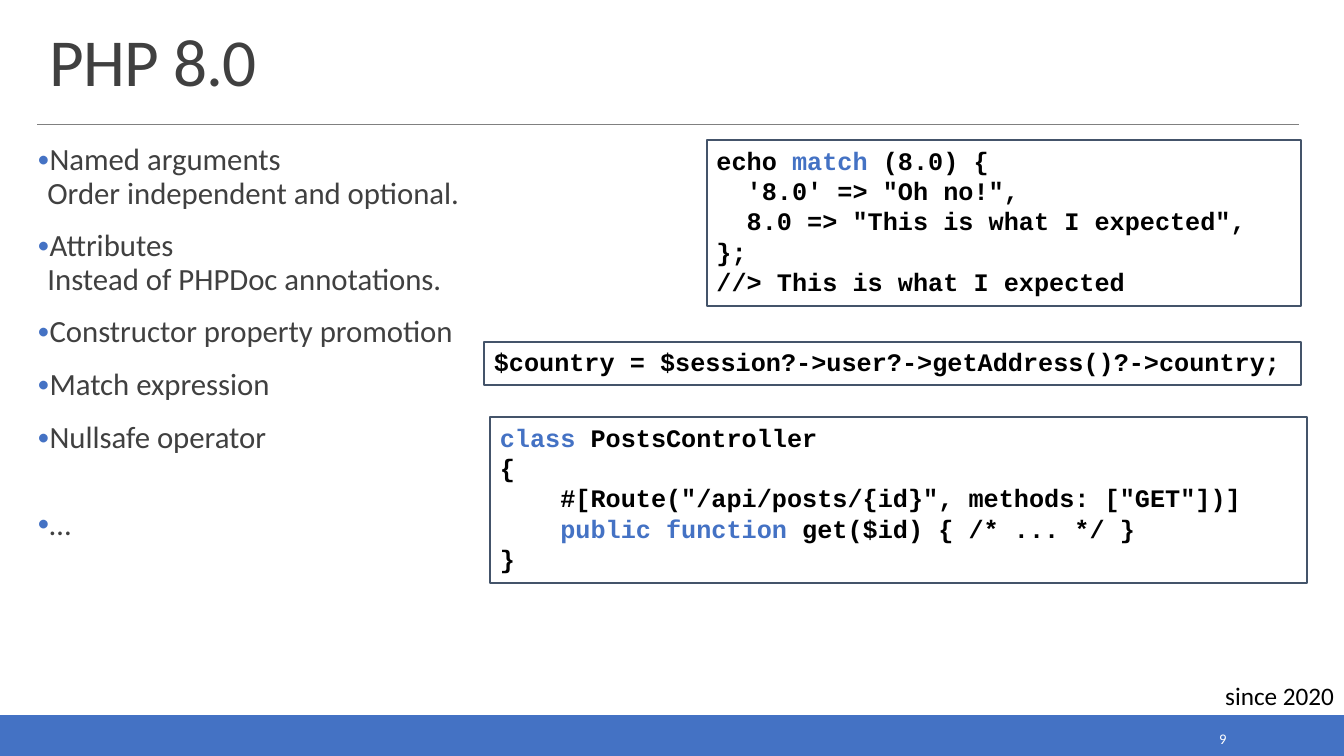
from collections import namedtuple
from dataclasses import dataclass

from pptx import Presentation
from pptx.dml.color import RGBColor
from pptx.enum.shapes import MSO_CONNECTOR, MSO_SHAPE
from pptx.enum.text import MSO_ANCHOR, MSO_AUTO_SIZE, PP_ALIGN
from pptx.oxml.ns import qn
from pptx.util import Emu, Inches, Pt

SLIDE_WIDTH, SLIDE_HEIGHT = Inches(13.333), Inches(7.5)
COLUMNS, ROWS = 40, 30
Box = namedtuple("Box", "left top width height")


@dataclass(frozen=True)
class Theme:
    """Colours, fonts and type sizes of the slide."""
    accent: str = "4472C4"
    heading: str = "404040"
    rule: str = "808080"
    frame: str = "44546A"
    ink: str = "000000"
    paper: str = "FFFFFF"
    prose: str = "Calibri"
    mono: str = "Courier New"
    title_size: float = 48
    list_size: float = 22
    code_size: float = 18
    number_size: float = 10.5


THEME = Theme()
FEATURES = [
    ("Named arguments", "Order independent and optional."),
    ("Attributes ", "Instead of PHPDoc annotations."),
    ("Constructor property promotion",),
    ("Match expression",),
    ("Nullsafe operator",),
    ("…",),
]
MATCH_CODE = [
    (0, [("echo ", False), ("match", True), (" (8.0) {", False)]),
    (2, [("'8.0' => \"Oh no!\",", False)]),
    (2, [('8.0 => "This is what I expected",', False)]),
    (0, [("};", False)]),
    (0, [("//> This is what I expected", False)]),
]
NULLSAFE_CODE = [
    (0, [("$country = $session?->user?->getAddress()?->country;", False)]),
]
CLASS_CODE = [
    (0, [("class ", True), ("PostsController", False)]),
    (0, [("{", False)]),
    (4, [('#[Route("/api/posts/{id}", methods: ["GET"])]', False)]),
    (4, [("public function", True), (" get($id) { /* ... */ }", False)]),
    (0, [("}", False)]),
]


def grid(column, row, columns, rows):
    """Turn grid columns and rows into a box on the slide."""
    across, down = SLIDE_WIDTH / COLUMNS, SLIDE_HEIGHT / ROWS
    return Box(Emu(round(column * across)), Emu(round(row * down)),
               Emu(round(columns * across)), Emu(round(rows * down)))


def colour(code):
    """Return the colour for a hex code."""
    return RGBColor.from_string(code)


def add_run(paragraph, words, size, ink, font=THEME.prose, bold=False):
    """Add one formatted run to a paragraph."""
    run = paragraph.add_run()
    run.text = words
    run.font.name, run.font.size, run.font.bold = font, Pt(size), bold
    run.font.color.rgb = colour(ink)
    return run


def paragraphs(frame, count):
    """Return the first paragraph of a frame and as many more as needed."""
    return [frame.paragraphs[0]] + [frame.add_paragraph() for _ in range(count - 1)]


def indent(paragraph, left, first=0):
    """Set the left and first-line indents of a paragraph."""
    properties = paragraph._p.get_or_add_pPr()
    properties.set("marL", str(left))
    properties.set("indent", str(first))
    return properties


def add_bullet(paragraph):
    """Give a paragraph a small accent bullet."""
    properties = indent(paragraph, Inches(0.1), Inches(-0.1))
    bullet_colour = properties.makeelement(qn("a:buClr"), {})
    bullet_colour.append(
        properties.makeelement(qn("a:srgbClr"), {"val": THEME.accent}))
    properties.append(bullet_colour)
    for tag, attributes in (("a:buSzPct", {"val": "80000"}),
                            ("a:buFont", {"typeface": THEME.prose}),
                            ("a:buChar", {"char": "•"})):
        properties.append(properties.makeelement(qn(tag), attributes))


def fill_title(slide, box, words):
    """Place and format the slide title."""
    title = slide.shapes.title
    title.left, title.top, title.width, title.height = box
    frame = title.text_frame
    frame.auto_size = MSO_AUTO_SIZE.NONE
    frame.vertical_anchor = MSO_ANCHOR.BOTTOM
    heading = frame.paragraphs[0]
    heading.alignment, heading.line_spacing = PP_ALIGN.LEFT, 0.85
    run = add_run(heading, words, THEME.title_size, THEME.heading)
    run.font._element.set("spc", "-50")


def add_rule(slide, box):
    """Draw the thin rule below the title."""
    rule = slide.shapes.add_connector(
        MSO_CONNECTOR.STRAIGHT, box.left, box.top, box.left + box.width, box.top)
    rule.line.color.rgb, rule.line.width = colour(THEME.rule), Pt(0.5)
    properties = rule._element.spPr
    properties.append(properties.makeelement(qn("a:effectLst"), {}))


def add_features(slide, box, features):
    """List the features, setting the last one apart."""
    frame = slide.shapes.add_textbox(*box).text_frame
    frame.word_wrap = True
    frame.margin_left = frame.margin_right = 0
    frame.margin_top = frame.margin_bottom = Inches(0.04)
    for paragraph, lines in zip(paragraphs(frame, len(features)), features):
        paragraph.line_spacing = 0.9
        paragraph.space_before = Pt(36 if lines == features[-1] else 12)
        paragraph.space_after = Pt(2)
        add_bullet(paragraph)
        for position, line in enumerate(lines):
            if position:
                paragraph.add_line_break()
            add_run(paragraph, line, THEME.list_size, THEME.heading)


def add_code(slide, box, lines):
    """Show lines of code in a frame, with keywords in the accent colour."""
    panel = slide.shapes.add_shape(MSO_SHAPE.RECTANGLE, *box)
    panel.shadow.inherit = False
    panel.fill.background()
    panel.line.color.rgb, panel.line.width = colour(THEME.frame), Pt(1.5)
    frame = panel.text_frame
    frame.word_wrap = True
    frame.vertical_anchor = MSO_ANCHOR.TOP
    character = Pt(THEME.code_size * 0.6)
    for paragraph, (depth, pieces) in zip(paragraphs(frame, len(lines)), lines):
        paragraph.alignment = PP_ALIGN.LEFT
        indent(paragraph, depth * character)
        for words, keyword in pieces:
            add_run(paragraph, words, THEME.code_size,
                    THEME.accent if keyword else THEME.ink, THEME.mono, True)


def add_label(slide, box, words, size, ink, anchor):
    """Add a short right-aligned label."""
    frame = slide.shapes.add_textbox(*box).text_frame
    frame.word_wrap, frame.vertical_anchor = True, anchor
    frame.paragraphs[0].alignment = PP_ALIGN.RIGHT
    add_run(frame.paragraphs[0], words, size, ink)


def add_footer(slide, box, number):
    """Draw the footer band with the slide number."""
    band = slide.shapes.add_shape(MSO_SHAPE.RECTANGLE, *box)
    band.shadow.inherit = False
    band.fill.solid()
    band.fill.fore_color.rgb = band.line.color.rgb = colour(THEME.accent)
    band.line.width = Pt(1.25)
    number_box = Box(round(box.width * 0.81), box.top + round(box.height * 0.22),
                     round(box.width * 0.11), round(box.height * 0.7))
    add_label(slide, number_box, number, THEME.number_size, THEME.paper,
              MSO_ANCHOR.MIDDLE)


def build_feature_slide(deck):
    """Build the slide of language features and code samples."""
    slide = deck.slides.add_slide(deck.slide_layouts[5])
    slide.background.fill.solid()
    slide.background.fill.fore_color.rgb = colour(THEME.paper)
    add_footer(slide, grid(0, 28.4, 40, 1.6), "9")
    add_rule(slide, grid(1.11, 4.92, 37.56, 0))
    fill_title(slide, grid(1.17, 0.8, 37.56, 3.36), "PHP 8.0")
    add_features(slide, grid(1.11, 5.56, 14.64, 22.04), FEATURES)
    add_code(slide, grid(21.03, 5.56, 17.7, 6.6), MATCH_CODE)
    add_code(slide, grid(14.4, 13.56, 24.33, 1.72), NULLSAFE_CODE)
    add_code(slide, grid(14.58, 16.56, 24.33, 6.56), CLASS_CODE)
    add_label(slide, grid(35.71, 26.8, 4.29, 1.6), "since 2020",
              THEME.code_size, THEME.ink, MSO_ANCHOR.TOP)


def main():
    """Create and save the presentation."""
    deck = Presentation()
    deck.slide_width, deck.slide_height = SLIDE_WIDTH, SLIDE_HEIGHT
    build_feature_slide(deck)
    deck.save("out.pptx")


if __name__ == "__main__":
    main()
